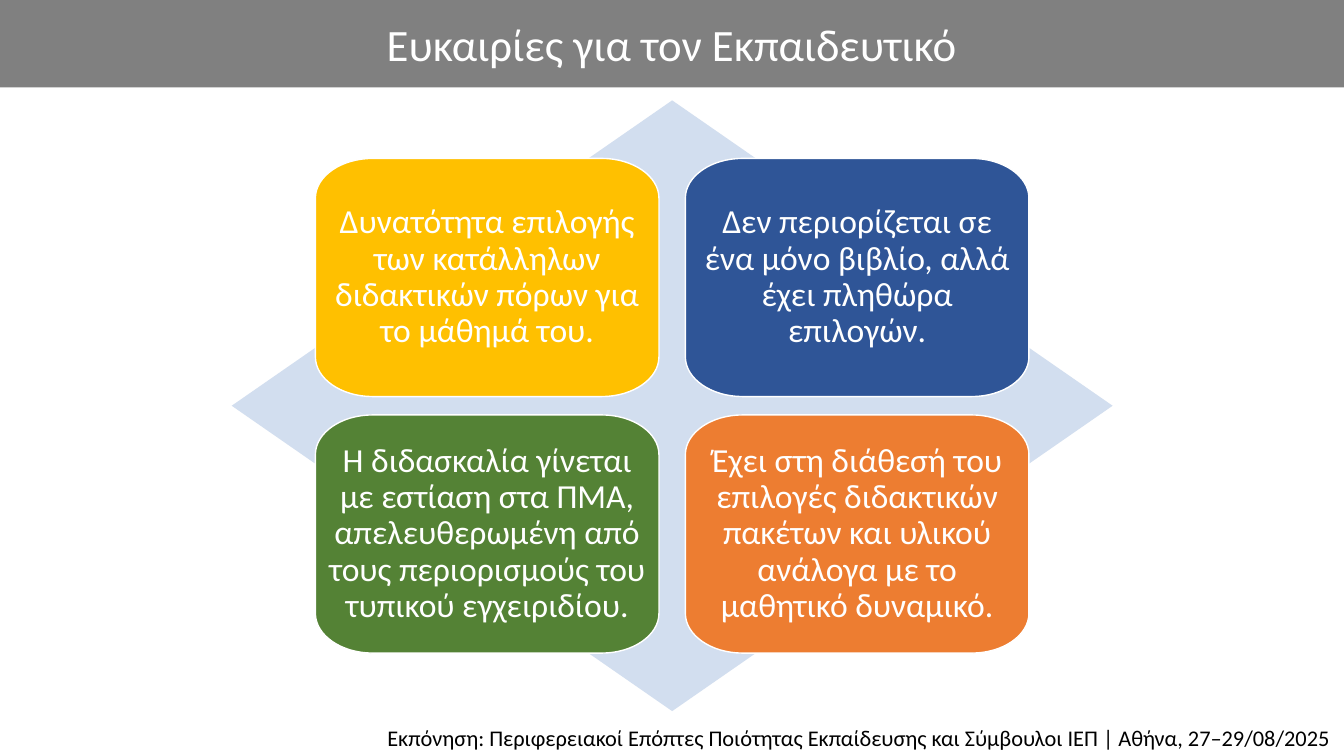
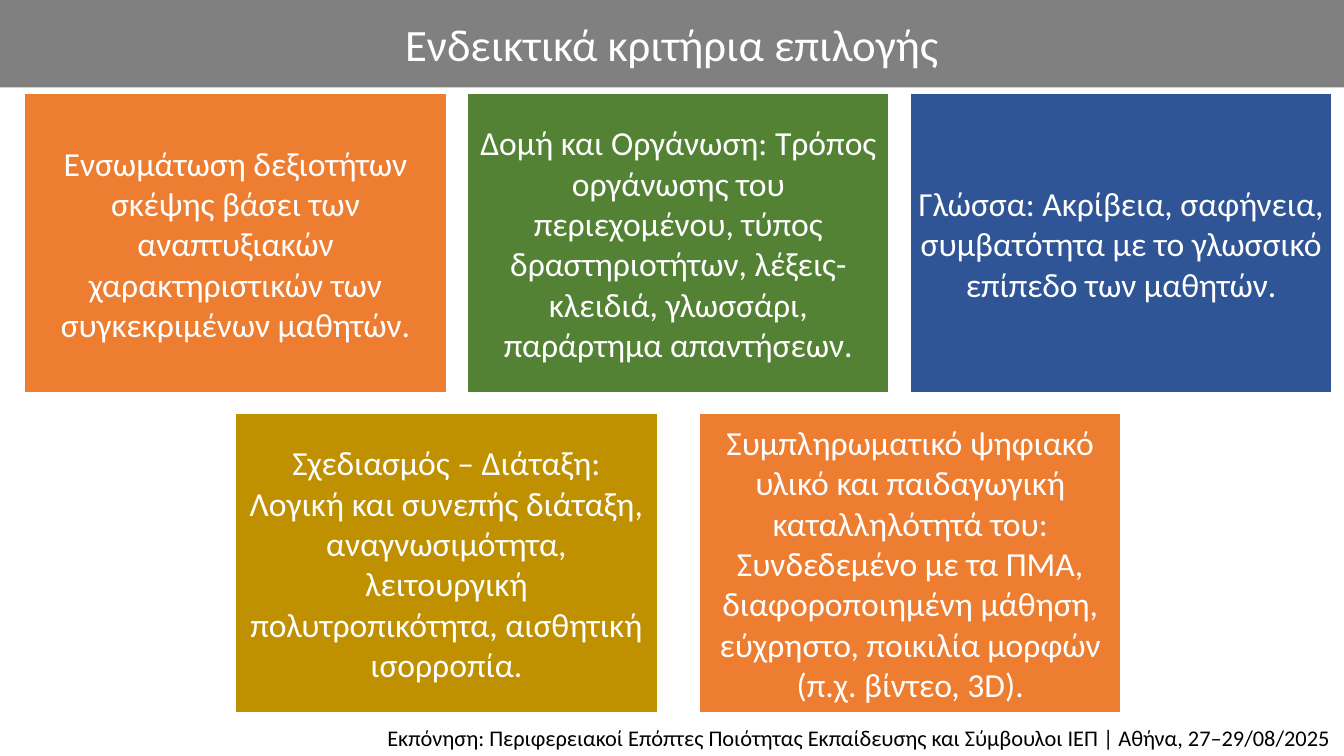
from collections import namedtuple

from lxml import etree
from pptx import Presentation
from pptx.dml.color import RGBColor
from pptx.enum.shapes import MSO_SHAPE
from pptx.enum.text import MSO_ANCHOR, MSO_AUTO_SIZE, PP_ALIGN
from pptx.oxml.ns import qn
from pptx.util import Cm, Pt

RECTANGLE, DIAMOND = MSO_SHAPE.RECTANGLE, MSO_SHAPE.DIAMOND
TOP, MIDDLE = MSO_ANCHOR.TOP, MSO_ANCHOR.MIDDLE
CENTER, RIGHT = PP_ALIGN.CENTER, PP_ALIGN.RIGHT
NO_AUTOFIT = MSO_AUTO_SIZE.NONE
TITLE_ONLY = 5

FONT = "Calibri"
WHITE, BLACK, GRAY = "FFFFFF", "000000", "808080"
AMBER, BLUE, GREEN = "FFC000", "2F5597", "548235"
ORANGE, GOLD, PALE_BLUE = "ED7D31", "BF9000", "D2DEEF"

Box = namedtuple("Box", "left top width height")  # centimetres
SLIDE = Box(0, 0, 33.87, 19.05)
TITLE_BAND = Box(0, 0, SLIDE.width, 2.2)
FOOTER_BAND = Box(0.08, 18.06, 33.7, 0.99)
FOOTER = ("Εκπόνηση: Περιφερειακοί Επόπτες Ποιότητας Εκπαίδευσης και "
          "Σύμβουλοι ΙΕΠ | Αθήνα, 27–29/08/2025")

OPPORTUNITIES = [
    (AMBER, "Δυνατότητα επιλογής των κατάλληλων διδακτικών πόρων για το μάθημά του."),
    (BLUE, "Δεν περιορίζεται σε ένα μόνο βιβλίο, αλλά έχει πληθώρα επιλογών."),
    (GREEN, "Η διδασκαλία γίνεται με εστίαση στα ΠΜΑ, απελευθερωμένη από τους "
            "περιορισμούς του τυπικού εγχειριδίου."),
    (ORANGE, "Έχει στη διάθεσή του επιλογές διδακτικών πακέτων και υλικού "
             "ανάλογα με το μαθητικό δυναμικό."),
]
# Each row: gap between its tiles, then the tiles
CRITERIA = [
    (0.53, [
        (ORANGE, "Ενσωμάτωση δεξιοτήτων σκέψης βάσει των αναπτυξιακών "
                 "χαρακτηριστικών των συγκεκριμένων μαθητών."),
        (GREEN, "Δομή και Οργάνωση: Τρόπος οργάνωσης του περιεχομένου, τύπος "
                "δραστηριοτήτων, λέξεις-κλειδιά, γλωσσάρι, παράρτημα απαντήσεων."),
        (BLUE, "Γλώσσα: Ακρίβεια, σαφήνεια, συμβατότητα με το γλωσσικό επίπεδο "
               "των μαθητών."),
    ]),
    (1.06, [
        (GOLD, "Σχεδιασμός – Διάταξη: Λογική και συνεπής διάταξη, αναγνωσιμότητα, "
               "λειτουργική πολυτροπικότητα, αισθητική ισορροπία."),
        (ORANGE, "Συμπληρωματικό ψηφιακό υλικό και παιδαγωγική καταλληλότητά του: "
                 "Συνδεδεμένο με τα ΠΜΑ, διαφοροποιημένη μάθηση, εύχρηστο, "
                 "ποικιλία μορφών (π.χ. βίντεο, 3D)."),
    ]),
]


def color(value):
    return RGBColor.from_string(value)


def lengths(box):
    return [Cm(value) for value in box]


def paint(shape, fill, line=None):
    shape.shadow.inherit = False
    shape.fill.solid()
    shape.fill.fore_color.rgb = color(fill)
    if line:
        shape.line.color.rgb = color(line)
        shape.line.width = Pt(1)
    else:
        shape.line.fill.background()


def write(shape, text, size=24, ink=WHITE, align=CENTER, anchor=MIDDLE,
          spacing=1.0, inset=None):
    """Fill the shape with one paragraph and return that paragraph."""
    frame = shape.text_frame
    frame.word_wrap = True
    frame.auto_size = NO_AUTOFIT
    frame.vertical_anchor = anchor
    if inset is not None:
        frame.margin_left = frame.margin_right = Cm(inset)
        frame.margin_top = frame.margin_bottom = Cm(inset)
    para = frame.paragraphs[0]
    para.alignment = align
    para.line_spacing = spacing
    span = para.add_run()
    span.text = text
    span.font.name = FONT
    span.font.size = Pt(size)
    span.font.color.rgb = color(ink)
    return para


def add_page(deck, title):
    """Add a slide with the shared title band."""
    page = deck.slides.add_slide(deck.slide_layouts[TITLE_ONLY])
    band = page.shapes.title
    band.left, band.top, band.width, band.height = lengths(TITLE_BAND)
    band.fill.solid()
    band.fill.fore_color.rgb = color(GRAY)
    write(band, title, size=32)
    return page


def add_footer(page):
    footer = page.shapes.add_shape(RECTANGLE, *lengths(FOOTER_BAND))
    paint(footer, WHITE)
    write(footer, FOOTER, size=16, ink=BLACK, align=RIGHT, anchor=TOP, spacing=1.1)


def curve_corners(tile):
    """Turn every second straight segment of the outline into a quarter ellipse."""
    bend = 0.55
    points = [(int(point.get("x")), int(point.get("y")))
              for point in tile.element.xpath(".//a:pt")]
    segments = tile.element.xpath(".//a:lnTo")
    for index in range(0, len(segments), 2):
        start, end = points[index], points[index + 1]
        upright = index % 4 == 0
        corner = (start[0], end[1]) if upright else (end[0], start[1])
        curve = etree.Element(qn("a:cubicBezTo"))
        for origin, reach in ((start, bend), (end, bend), (end, 0)):
            x, y = (round(a + (b - a) * reach) for a, b in zip(origin, corner))
            etree.SubElement(curve, qn("a:pt"), x=str(x), y=str(y))
        segments[index].getparent().replace(segments[index], curve)


def add_rounded_tile(shapes, box, fill, text):
    """Draw a tile whose corners are ellipses, a sixth of each side."""
    left, top, width, height = lengths(box)
    right, bottom = left + width, top + height
    radius_x, radius_y = width // 6, height // 6
    outline = shapes.build_freeform(left, top + radius_y)
    outline.add_line_segments([
        (left + radius_x, top), (right - radius_x, top),
        (right, top + radius_y), (right, bottom - radius_y),
        (right - radius_x, bottom), (left + radius_x, bottom),
        (left, bottom - radius_y),
    ], close=False)
    outline.add_line_segments([(left, top + radius_y)], close=True)
    tile = outline.convert_to_shape()
    curve_corners(tile)
    paint(tile, fill, WHITE)
    write(tile, text, spacing=0.9, inset=0.33)


def add_matrix(page, box, tiles):
    """Group four tiles, two by two, over a diamond that fills the box."""
    shapes = page.shapes.add_group_shape().shapes
    paint(shapes.add_shape(DIAMOND, *lengths(box)), PALE_BLUE)
    margin, share, pitch = 0.095, 0.39, 0.42
    for index, (fill, text) in enumerate(tiles):
        row, column = divmod(index, 2)
        tile_box = Box(box.left + box.width * (margin + column * pitch),
                       box.top + box.height * (margin + row * pitch),
                       box.width * share, box.height * share)
        add_rounded_tile(shapes, tile_box, fill, text)


def add_centered_rows(page, box, rows):
    """Stack rows of equal tiles, each row centered in the box."""
    width, height = 10.63, 7.54
    row_pitch = (box.height - height) / (len(rows) - 1)
    for row, (gap, tiles) in enumerate(rows):
        row_width = len(tiles) * (width + gap) - gap
        left = box.left + (box.width - row_width) / 2
        for column, (fill, text) in enumerate(tiles):
            tile_box = Box(left + column * (width + gap),
                           box.top + row * row_pitch, width, height)
            tile = page.shapes.add_shape(RECTANGLE, *lengths(tile_box))
            paint(tile, fill, WHITE)
            para = write(tile, text, inset=0.18)
            para.space_before = para.space_after = Pt(6)


def main():
    deck = Presentation()
    deck.slide_width, deck.slide_height = Cm(SLIDE.width), Cm(SLIDE.height)
    page = add_page(deck, "Ευκαιρίες για τον Εκπαιδευτικό")
    add_matrix(page, Box(5.84, 2.53, 22.2, 15.39), OPPORTUNITIES)
    add_footer(page)
    page = add_page(deck, "Ενδεικτικά κριτήρια επιλογής")
    add_centered_rows(page, Box(0.62, 2.36, 32.95, 15.6), CRITERIA)
    add_footer(page)
    deck.save("out.pptx")


if __name__ == "__main__":
    main()
